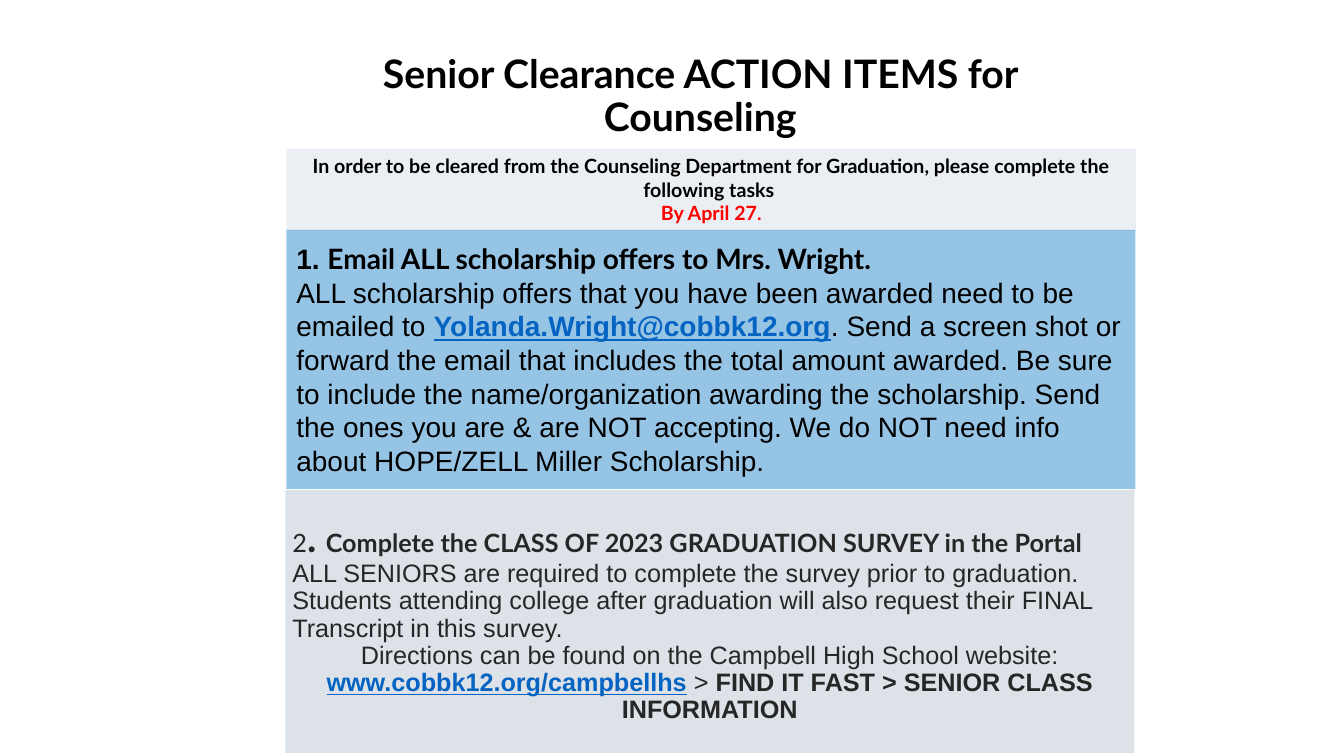
from dataclasses import dataclass, field

from lxml.etree import SubElement
from pptx import Presentation
from pptx.dml.color import RGBColor
from pptx.enum.shapes import MSO_SHAPE as Preset
from pptx.enum.text import MSO_ANCHOR as Anchor, PP_ALIGN as Align
from pptx.oxml.ns import qn
from pptx.util import Inches, Pt

BLACK, DARK, RED, LINK_BLUE = "000000", "262626", "FF0000", "0563C1"
LINK = {"bold": True, "underline": True}


@dataclass
class Run:
    text: str
    size: float
    font: str = "Arial"
    color: str = BLACK
    style: dict[str, bool] = field(default_factory=dict)
    line_break: bool = False


@dataclass
class TextLine:
    runs: list[Run]
    align: Align = Align.CENTER
    spacing: float = 1.0


@dataclass
class Panel:
    box: tuple[float, float, float, float]
    lines: list[TextLine]
    fill: str | None = None
    opacity: int = 100
    anchor: Anchor = Anchor.MIDDLE
    margins: tuple[float, float] = (0.1, 0.05)


def rgb(value: str) -> RGBColor:
    return RGBColor.from_string(value)


def heading(text: str, size: float, color: str = BLACK, line_break: bool = False) -> Run:
    return Run(text, size, "Lato", color, {"bold": True}, line_break)


def add_line(paragraph, line: TextLine) -> None:
    paragraph.alignment = line.align
    paragraph.line_spacing = line.spacing
    for item in line.runs:
        run = paragraph.add_run()
        run.text = item.text
        run.font.color.rgb = rgb(item.color)
        formats = {"name": item.font, "size": Pt(item.size), "bold": False} | item.style
        for name, value in formats.items():
            setattr(run.font, name, value)
        if item.line_break:
            paragraph.add_line_break()


def add_panel(slide, panel: Panel) -> None:
    box = [Inches(length) for length in panel.box]
    if panel.fill:
        shape = slide.shapes.add_shape(Preset.RECTANGLE, *box)
        shape.shadow.inherit = False
        shape.line.fill.background()
        shape.fill.solid()
        shape.fill.fore_color.rgb = rgb(panel.fill)
        if panel.opacity < 100:
            color = shape.fill._xPr.find(f".//{qn('a:srgbClr')}")
            SubElement(color, qn("a:alpha"), val=str(panel.opacity * 1000))
    else:
        shape = slide.shapes.add_textbox(*box)

    frame = shape.text_frame
    side, edge = (Inches(margin) for margin in panel.margins)
    formats = {
        "word_wrap": True, "vertical_anchor": panel.anchor,
        "margin_left": side, "margin_right": side,
        "margin_top": edge, "margin_bottom": edge,
    }
    for name, value in formats.items():
        setattr(frame, name, value)
    for index, line in enumerate(panel.lines):
        add_line(frame.add_paragraph() if index else frame.paragraphs[0], line)


# Title
TITLE = Panel((2.73, 0.49, 8.43, 0.95), [
    TextLine([heading("Senior Clearance ACTION ITEMS for Counseling", 28)], spacing=0.9),
])

# Deadline
DEADLINE = Panel((2.84, 1.48, 8.43, 0.81), [
    TextLine([heading("In order to be cleared from the Counseling Department for Graduation, "
                      "please complete the following tasks ", 14)]),
    TextLine([heading("By April 27", 14, RED), heading(".", 13.5, RED)]),
], fill="EBEEF2", anchor=Anchor.TOP)

# Task 1: scholarship offers
SCHOLARSHIPS = Panel((2.84, 2.28, 8.42, 2.57), [
    TextLine([
        Run("1. ", 20, style={"bold": True}),
        heading("Email ALL scholarship offers to Mrs. Wright. ", 20, line_break=True),
        Run("ALL scholarship offers that you have been awarded need to be emailed to ", 20),
        Run("Yolanda.Wright@cobbk12.org", 20, color=LINK_BLUE, style=LINK),
        Run(". Send a screen shot or forward the email that includes the total amount awarded. "
            "Be sure to include the name/organization awarding the scholarship. "
            "Send the ones you are & are NOT accepting. "
            "We do NOT need info about HOPE/ZELL Miller Scholarship.", 20),
    ], Align.LEFT),
], fill="0070C0", opacity=41)

# Task 2: graduation survey
SURVEY = Panel((2.83, 4.86, 8.42, 2.61), [
    TextLine([
        Run("2", 18, "Lato", DARK),
        heading(". ", 28, DARK),
        heading("Complete the CLASS OF 2023 GRADUATION SURVEY in the Portal ", 18, DARK, True),
        Run("ALL SENIORS are required to complete the survey prior to graduation. "
            "Students attending college after graduation will also request their "
            "FINAL Transcript in this survey.", 18, color=DARK),
    ], Align.LEFT, 0.9),
    TextLine([
        Run("Directions can be found on the Campbell High School website: ", 18, color=DARK),
        Run("www.cobbk12.org/campbellhs", 18, color=LINK_BLUE, style=LINK),
        Run(" ", 18),
        Run("> ", 18, color=DARK),
        Run("FIND IT FAST > SENIOR CLASS INFORMATION", 18, color=DARK, style={"bold": True}),
    ], spacing=0.9),
], fill="CCD4DE", opacity=66, margins=(0.07, 0.04))


def main() -> None:
    presentation = Presentation()
    presentation.slide_width = Inches(13.33)
    presentation.slide_height = Inches(7.5)
    slide = presentation.slides.add_slide(presentation.slide_layouts[6])
    for panel in (TITLE, DEADLINE, SCHOLARSHIPS, SURVEY):
        add_panel(slide, panel)
    presentation.save("out.pptx")


if __name__ == "__main__":
    main()
